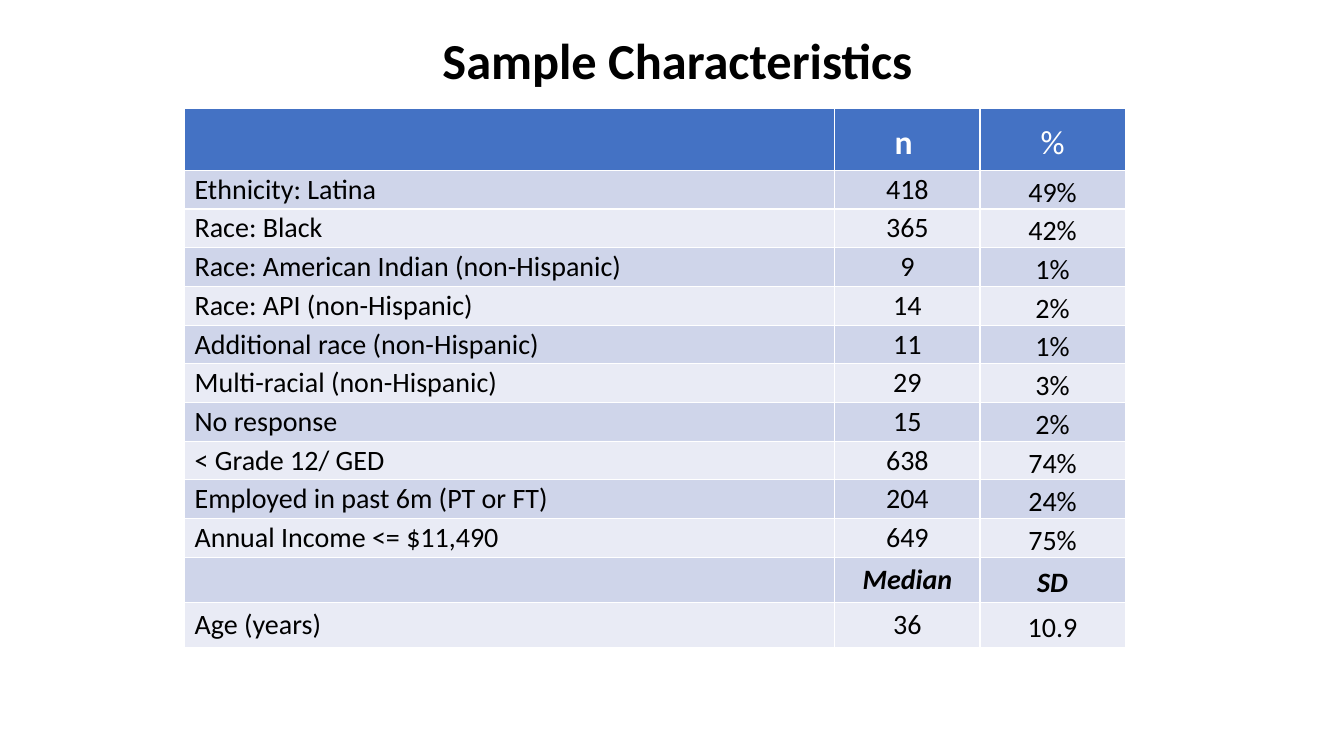
import pptx
import pptx.util
import pptx.dml.color
import pptx.enum.text
import pptx.oxml
import pptx.oxml.ns

COLORS = {
    "text": "000000",
    "header_text": "FFFFFF",
    "header": "4472C4",
    "band_dark": "CFD5EA",
    "band_light": "E9EBF5",
    "border": "FFFFFF",
}
FONT = "Calibri"
COLUMN_WIDTHS = [6.45, 1.44, 1.44]
HEADER_HEIGHT, ROW_HEIGHT, AGE_ROW_HEIGHT = 0.61, 0.36, 0.45
AGE_ROWS = 2
SUBHEADER = ("", "Median", "SD")
ROWS = [
    ("", "n ", "%"),
    ("Ethnicity: Latina", "418", "49%"),
    ("Race: Black", "365", "42%"),
    ("Race: American Indian (non-Hispanic)", "9", "1%"),
    ("Race: API (non-Hispanic)", "14", "2%"),
    ("Additional race (non-Hispanic)", "11", "1%"),
    ("Multi-racial (non-Hispanic)", "29", "3%"),
    ("No response", "15", "2%"),
    ("< Grade 12/ GED", "638", "74%"),
    ("Employed in past 6m (PT or FT)", "204", "24%"),
    ("Annual Income <= $11,490", "649", "75%"),
    SUBHEADER,
    ("Age (years)", "36", "10.9"),
]

Inches = pptx.util.Inches
ALIGN = pptx.enum.text.PP_ALIGN
MIDDLE = pptx.enum.text.MSO_ANCHOR.MIDDLE


def rgb(name):
    return pptx.dml.color.RGBColor.from_string(COLORS[name])


def style_paragraph(p, size, color, align, spacing=1.0, bold=False, italic=False):
    p.alignment = align
    p.line_spacing = spacing
    p.font.name = FONT
    p.font.size = pptx.util.Pt(size)
    p.font.bold = bold
    p.font.italic = italic
    p.font.color.rgb = rgb(color)


def add_title(s, text, left, top, width, height):
    box = s.shapes.add_textbox(Inches(left), Inches(top), Inches(width), Inches(height))
    tf = box.text_frame
    tf.word_wrap = True
    tf.vertical_anchor = MIDDLE
    p = tf.paragraphs[0]
    p.text = text
    style_paragraph(p, 36, "text", ALIGN.CENTER, spacing=0.9, bold=True)


def add_borders(cell):
    """Draw the four cell edges; must run before the fill is set."""
    tc_pr = cell._tc.get_or_add_tcPr()
    for side in "LRTB":
        tc_pr.append(pptx.oxml.parse_xml(
            f'<a:ln{side} {pptx.oxml.ns.nsdecls("a")} w="12700"><a:solidFill>'
            f'<a:srgbClr val="{COLORS["border"]}"/></a:solidFill></a:ln{side}>'))


def fill_cell(cell, text, row, col):
    add_borders(cell)
    is_header = row == 0
    band = "header" if is_header else "band_dark" if row % 2 else "band_light"
    cell.fill.solid()
    cell.fill.fore_color.rgb = rgb(band)
    if not text:
        return
    cell.margin_top = cell.margin_bottom = 0
    cell.vertical_anchor = MIDDLE
    p = cell.text_frame.paragraphs[0]
    p.text = text
    is_subheader = ROWS[row] == SUBHEADER
    style_paragraph(
        p,
        size=24 if is_header else 20,
        color="header_text" if is_header else "text",
        align=ALIGN.CENTER if col else ALIGN.LEFT,
        spacing=1.15 if is_header or col == 2 else 1.0,
        bold=is_subheader or (is_header and col == 1),
        italic=is_subheader,
    )


def add_characteristics_table(s, left, top):
    plain_rows = len(ROWS) - 1 - AGE_ROWS
    heights = [HEADER_HEIGHT] + [ROW_HEIGHT] * plain_rows + [AGE_ROW_HEIGHT] * AGE_ROWS
    table = s.shapes.add_table(
        len(ROWS), len(COLUMN_WIDTHS), Inches(left), Inches(top),
        Inches(sum(COLUMN_WIDTHS)), Inches(sum(heights))).table
    for column, width in zip(table.columns, COLUMN_WIDTHS):
        column.width = Inches(width)
    for row, height in enumerate(heights):
        table.rows[row].height = Inches(height)
        for col, text in enumerate(ROWS[row]):
            fill_cell(table.cell(row, col), text, row, col)


def main():
    prs = pptx.Presentation()
    prs.slide_width, prs.slide_height = Inches(13.33), Inches(7.5)
    s = prs.slides.add_slide(prs.slide_layouts[6])
    add_title(s, "Sample Characteristics", 0.33, 0, 12.78, 1.25)
    add_characteristics_table(s, 1.83, 1.08)
    prs.save("out.pptx")


if __name__ == "__main__":
    main()
